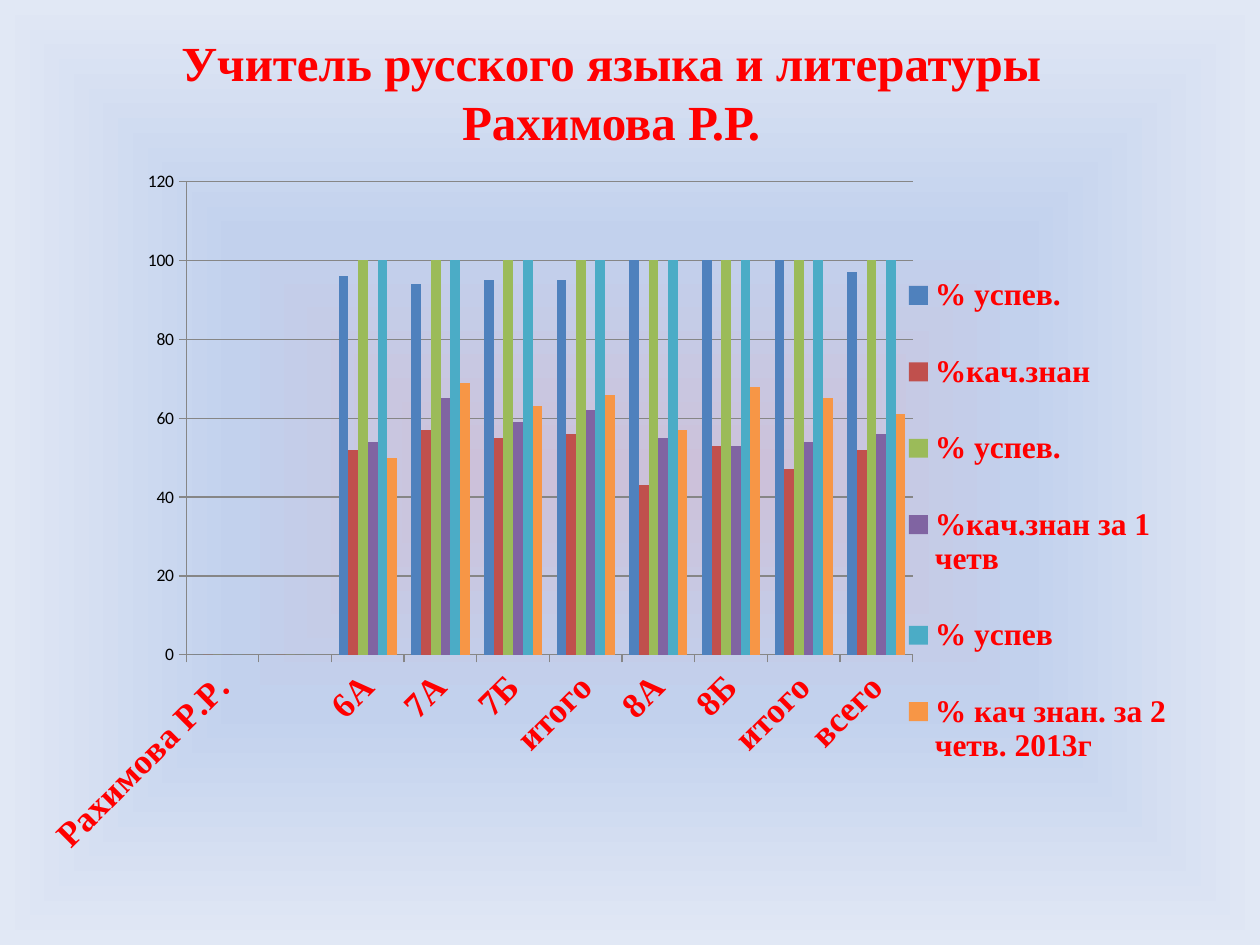
from pptx import Presentation
from pptx.chart.data import CategoryChartData
from pptx.dml.color import RGBColor
from pptx.enum.chart import XL_CHART_TYPE, XL_LEGEND_POSITION, XL_TICK_MARK
from pptx.enum.text import MSO_ANCHOR, PP_ALIGN
from pptx.oxml import parse_xml
from pptx.oxml.ns import nsdecls, qn
from pptx.util import Cm, Pt

COLUMNS = XL_CHART_TYPE.COLUMN_CLUSTERED
RIGHT = XL_LEGEND_POSITION.RIGHT
OUTSIDE = XL_TICK_MARK.OUTSIDE
CENTER = PP_ALIGN.CENTER
TOP = MSO_ANCHOR.TOP

TITLE = ["Учитель русского языка и литературы", "Рахимова Р.Р."]
CATEGORIES = ["Рахимова Р.Р.", "", "6А", "7А", "7Б", "итого", "8А", "8Б", "итого", "всего"]
SERIES = [
    ("% успев.", "4F81BD", [0, 0, 96, 94, 95, 95, 100, 100, 100, 97]),
    ("%кач.знан", "C0504D", [0, 0, 52, 57, 55, 56, 43, 53, 47, 52]),
    ("% успев.", "9BBB59", [0, 0] + [100] * 8),
    ("%кач.знан за 1 четв", "8064A2", [0, None, 54, 65, 59, 62, 55, 53, 54, 56]),
    ("% успев", "4BACC6", [0, 0] + [100] * 8),
    ("% кач знан. за 2 четв. 2013г", "F79646", [None, None, 50, 69, 63, 66, 57, 68, 65, 61]),
]
THEME = {
    "accent": "FF0000", "text": "000000", "line": "868686",
    "heading_font": "Times New Roman", "body_font": "Calibri",
    "title": 28, "category": 20, "legend": 18, "chart": 10,
    "background": [(0, "CCC1DA"), (50, "C2D1ED"), (100, "E1E8F5")],
}
TITLE_BOX = (Cm(0.32), Cm(0.53), Cm(24), Cm(2.64))
CHART_BOX = (Cm(0.51), Cm(3.18), Cm(24.21), Cm(14.35))
PLOT_PERCENT = {"x": 13.4, "y": 3.35, "w": 60.5, "h": 66.5}
LEGEND_PERCENT = {"x": 71.3, "y": 11, "w": 26, "h": 80}


def style_font(font, size, color, name, bold):
    font.size = Pt(size)
    font.color.rgb = RGBColor.from_string(color)
    font.name = name
    font.bold = bold


def style_heading(font, size):
    style_font(font, size, THEME["accent"], THEME["heading_font"], True)


def paint_background(slide):
    fill = slide.background.fill
    fill.gradient()
    gradient = slide.background._cSld.find(".//" + qn("a:gradFill"))
    stops = "".join(
        f'<a:gs pos="{position * 1000}"><a:srgbClr val="{color}"/></a:gs>'
        for position, color in THEME["background"]
    )
    gradient.getparent().replace(gradient, parse_xml(
        f'<a:gradFill {nsdecls("a")} rotWithShape="1"><a:gsLst>{stops}</a:gsLst>'
        '<a:path path="shape"><a:fillToRect l="50000" t="50000" r="50000" b="50000"/>'
        '</a:path></a:gradFill>'
    ))


def place(element, index, percents, inner=False):
    for old in element.findall(qn("c:layout")):
        element.remove(old)
    target = '<c:layoutTarget val="inner"/>' if inner else ""
    modes = "".join(f'<c:{axis}Mode val="edge"/>' for axis in "xy")
    sizes = "".join(f'<c:{key} val="{value / 100:.4f}"/>' for key, value in percents.items())
    element.insert(index, parse_xml(
        f'<c:layout {nsdecls("c")}><c:manualLayout>{target}{modes}{sizes}'
        '</c:manualLayout></c:layout>'
    ))


def add_title(slide):
    title = slide.shapes.title
    title.left, title.top, title.width, title.height = TITLE_BOX
    frame = title.text_frame
    frame.word_wrap = True
    frame.vertical_anchor = TOP
    frame.text = "\n".join(TITLE)
    for paragraph in frame.paragraphs:
        paragraph.alignment = CENTER
        style_heading(paragraph.font, THEME["title"])


def add_results_chart(slide):
    data = CategoryChartData()
    data.categories = CATEGORIES
    for name, _, values in SERIES:
        data.add_series(name, values)
    chart = slide.shapes.add_chart(COLUMNS, *CHART_BOX, data).chart
    chart.has_title = False
    style_font(chart.font, THEME["chart"], THEME["text"], THEME["body_font"], False)

    plot = chart.plots[0]
    plot.gap_width = 150
    plot.overlap = 0
    plot.vary_by_categories = False
    for series, (_, color, _) in zip(plot.series, SERIES):
        series.format.fill.solid()
        series.format.fill.fore_color.rgb = RGBColor.from_string(color)

    category_axis, value_axis = chart.category_axis, chart.value_axis
    value_axis.minimum_scale = 0
    value_axis.maximum_scale = 120
    value_axis.major_unit = 20
    value_axis.has_major_gridlines = True
    category_axis.major_tick_mark = value_axis.major_tick_mark = OUTSIDE
    for item in (category_axis, value_axis, value_axis.major_gridlines):
        item.format.line.color.rgb = RGBColor.from_string(THEME["line"])
        item.format.line.width = Pt(0.75)
    style_heading(category_axis.tick_labels.font, THEME["category"])
    category_axis._element.find(qn("c:txPr")).find(qn("a:bodyPr")).set("rot", "-2700000")

    chart.has_legend = True
    legend = chart.legend
    legend.position = RIGHT
    legend.include_in_layout = False
    style_heading(legend.font, THEME["legend"])
    place(legend._element, 1, LEGEND_PERCENT)
    place(chart._chartSpace.chart.plotArea, 0, PLOT_PERCENT, inner=True)


def main():
    presentation = Presentation()
    presentation.slide_width = Cm(25.4)
    presentation.slide_height = Cm(19.05)
    slide = presentation.slides.add_slide(presentation.slide_layouts[5])
    paint_background(slide)
    add_title(slide)
    add_results_chart(slide)
    presentation.save("out.pptx")


if __name__ == "__main__":
    main()
